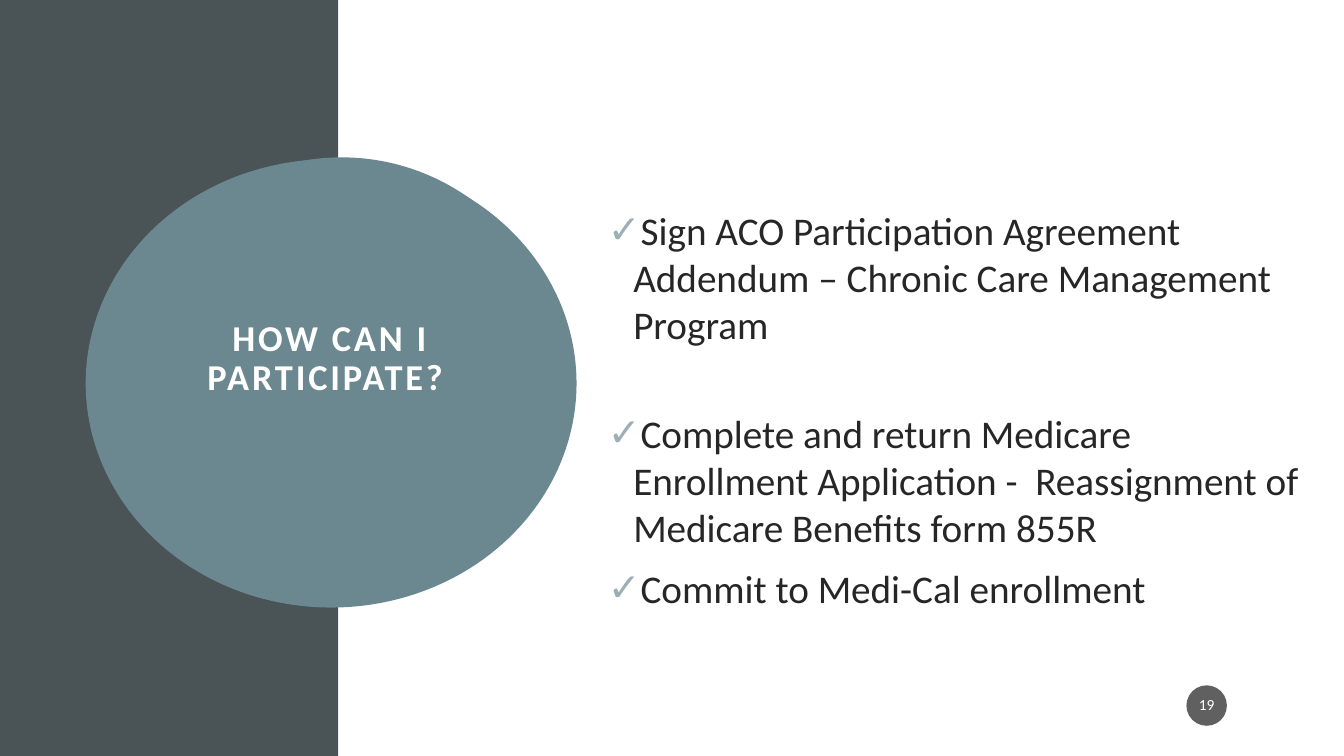
from dataclasses import dataclass
from typing import Optional

import lxml.etree
import pptx
import pptx.dml.color
import pptx.enum.shapes
import pptx.enum.text
import pptx.oxml.ns
import pptx.util

Cm = pptx.util.Cm
Pt = pptx.util.Pt
RGB = pptx.dml.color.RGBColor
KIND = pptx.enum.shapes.MSO_SHAPE
ANCHOR = pptx.enum.text.MSO_ANCHOR
ALIGN = pptx.enum.text.PP_ALIGN
qn = pptx.oxml.ns.qn

SLATE = RGB(0x4A, 0x53, 0x56)
TEAL = RGB(0x6B, 0x88, 0x91)
MIST = RGB(0x9B, 0xAF, 0xB5)
INK = RGB(0x26, 0x26, 0x26)
COAL = RGB(0x1D, 0x1D, 0x1D)
WHITE = RGB(0xFF, 0xFF, 0xFF)
FONT = "Calibri"


@dataclass
class Panel:
    kind: int
    left: float
    top: float
    width: float
    height: float
    fill: RGB
    line: Optional[RGB] = None


@dataclass
class Step:
    text: str
    gap: float


BAND = 8.53
PANELS = [
    Panel(KIND.RECTANGLE, 0, 0, BAND, 19.05, SLATE),
    Panel(KIND.RECTANGLE, BAND, 0, 33.87 - BAND, 19.05, WHITE),
    Panel(KIND.OVAL, 3.1, 4.01, 11.02, 11.02, WHITE, TEAL),
    Panel(KIND.OVAL, 2.16, 4.01, 12.37, 11.3, TEAL),
]
BADGE = Panel(KIND.OVAL, 29.9, 17.27, 1.02, 1.02, COAL)
STEPS = [
    Step("Sign ACO Participation Agreement Addendum – Chronic Care Management Program", 0),
    Step("Complete and return Medicare Enrollment Application -  "
         "Reassignment of Medicare Benefits form 855R", 44),
    Step("Commit to Medi-Cal enrollment", 10),
]


def draw(shapes, panel: Panel):
    shape = shapes.add_shape(panel.kind, Cm(panel.left), Cm(panel.top),
                             Cm(panel.width), Cm(panel.height))
    shape.shadow.inherit = False
    shape.fill.solid()
    shape.fill.fore_color.rgb = panel.fill
    if panel.line is None:
        shape.line.fill.background()
    else:
        shape.line.color.rgb = panel.line
        shape.line.width = Pt(2.5)
    return shape


def write(para, text: str, size: float, color: RGB, bold: bool = False):
    run = para.add_run()
    run.text = text
    run.font.name = FONT
    run.font.size = Pt(size)
    run.font.bold = bold
    run.font.color.rgb = color
    return run


def frame(shape, side: float, edge: float, anchor):
    box = shape.text_frame
    box.word_wrap = True
    box.auto_size = pptx.enum.text.MSO_AUTO_SIZE.NONE
    box.vertical_anchor = anchor
    box.margin_left = box.margin_right = Cm(side)
    box.margin_top = box.margin_bottom = Cm(edge)
    return box


def center(para) -> None:
    para.alignment = ALIGN.CENTER
    para.line_spacing = 0.9
    para.space_after = Pt(6)


def tick(para) -> None:
    props = para._p.get_or_add_pPr()
    props.set("marL", str(Cm(0.64)))
    props.set("indent", str(-Cm(0.64)))
    tint = lxml.etree.SubElement(props, qn("a:buClr"))
    lxml.etree.SubElement(tint, qn("a:srgbClr"), val=str(MIST))
    lxml.etree.SubElement(props, qn("a:buFont"), typeface=FONT)
    lxml.etree.SubElement(props, qn("a:buChar"), char="✓")


def head(title, below) -> None:
    below._element.addnext(title._element)
    title.left, title.top = Cm(3.99), Cm(7.55)
    title.width, title.height = Cm(8.7), Cm(3.5)
    para = frame(title, 0.51, 0.51, ANCHOR.TOP).paragraphs[0]
    center(para)
    run = write(para, "HOW CAN I PARTICIPATE? ", 26, WHITE, True)
    run.font._element.set("spc", "200")


def main() -> None:
    deck = pptx.Presentation()
    deck.slide_width, deck.slide_height = Cm(33.87), Cm(19.05)
    slide = deck.slides.add_slide(deck.slide_layouts[5])
    shapes = slide.shapes

    # Background and title
    disc = [draw(shapes, panel) for panel in PANELS][-1]
    head(shapes.title, disc)

    # Checklist
    area = shapes.add_textbox(Cm(15.07), Cm(2.72), Cm(18.1), Cm(12.95))
    box = frame(area, 0.25, 0.13, ANCHOR.TOP)
    box.margin_top = Cm(2.48)
    for i, step in enumerate(STEPS):
        para = box.add_paragraph() if i else box.paragraphs[0]
        para.space_before = Pt(step.gap)
        tick(para)
        write(para, step.text, 28, INK)

    # Page badge
    badge = draw(shapes, BADGE)
    shade = badge._element.spPr.find(qn("a:solidFill"))[0]
    lxml.etree.SubElement(shade, qn("a:alpha"), val="70000")
    para = frame(badge, 0.05, 0.13, ANCHOR.MIDDLE).paragraphs[0]
    center(para)
    write(para, "19", 11, WHITE)

    deck.save("out.pptx")


if __name__ == "__main__":
    main()
